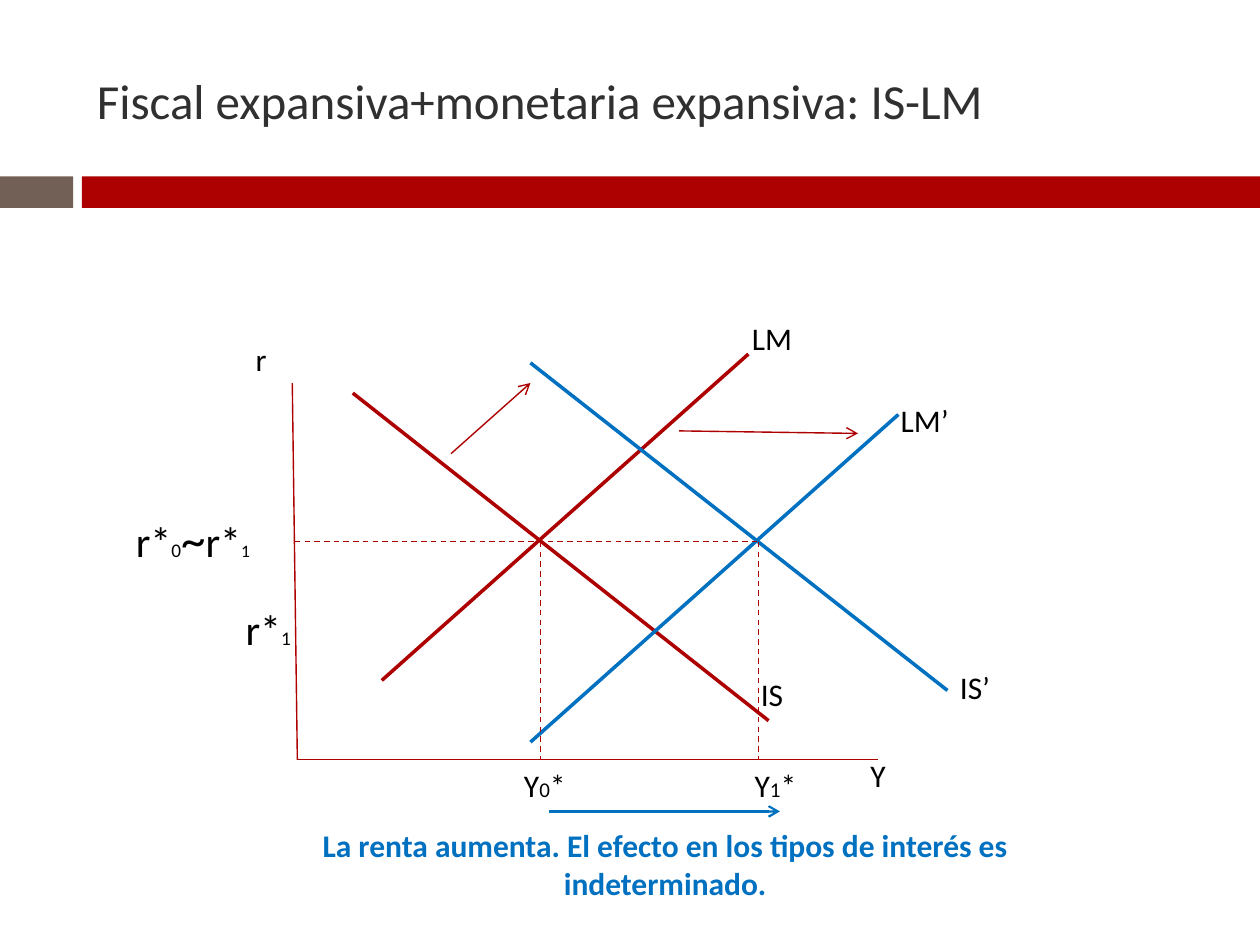
from lxml import etree
from pptx import Presentation
from pptx.dml.color import RGBColor
from pptx.enum.dml import MSO_LINE
from pptx.enum.shapes import MSO_CONNECTOR, MSO_SHAPE
from pptx.enum.text import MSO_ANCHOR, PP_ALIGN
from pptx.oxml.ns import qn
from pptx.util import Inches, Pt

RED = RGBColor(0xAD, 0x01, 0x01)
TAUPE = RGBColor(0x72, 0x60, 0x56)
BLUE = RGBColor(0x00, 0x70, 0xC0)
CHARCOAL = RGBColor(0x30, 0x30, 0x30)
BLACK = RGBColor(0x00, 0x00, 0x00)
RECTANGLE = MSO_SHAPE.RECTANGLE
STRAIGHT = MSO_CONNECTOR.STRAIGHT
DASH = MSO_LINE.DASH
TOP, MIDDLE = MSO_ANCHOR.TOP, MSO_ANCHOR.MIDDLE
LEFT, CENTER = PP_ALIGN.LEFT, PP_ALIGN.CENTER
COLUMNS, ROWS = 100, 75
THIN, MEDIUM, THICK = 0.79, 1.25, 2


class DiagramSlide:
    """Draw on one slide with a shared style and a grid of 100 columns by 75 rows."""

    font = "Calibri"

    def __init__(self, deck):
        self.column = deck.slide_width / COLUMNS
        self.row = deck.slide_height / ROWS
        self.shapes = deck.slides.add_slide(deck.slide_layouts[6]).shapes

    def place(self, *lengths):
        units = (self.column, self.row) * 2
        return [round(length * unit) for length, unit in zip(lengths, units)]

    def band(self, box, color):
        band = self.shapes.add_shape(RECTANGLE, *self.place(*box))
        band.shadow.inherit = False
        band.fill.solid()
        band.fill.fore_color.rgb = color
        band.line.fill.background()

    def line(self, ends, color=RED, width=THIN, dash=None, arrow=False):
        line = self.shapes.add_connector(STRAIGHT, *self.place(*ends))
        line.line.color.rgb = color
        line.line.width = Pt(width)
        if dash:
            line.line.dash_style = dash
        if arrow:
            outline = line.line._get_or_add_ln()
            etree.SubElement(outline, qn("a:tailEnd"), type="arrow")
        etree.SubElement(line._element.spPr, qn("a:effectLst"))

    def text(self, box, *runs, color=BLACK, bold=False, align=LEFT, anchor=TOP):
        frame = self.shapes.add_textbox(*self.place(*box)).text_frame
        frame.word_wrap = True
        frame.vertical_anchor = anchor
        paragraph = frame.paragraphs[0]
        paragraph.alignment = align
        for words, size in runs:
            run = paragraph.add_run()
            run.text = words
            run.font.name = self.font
            run.font.size = Pt(size)
            run.font.bold = bold
            run.font.color.rgb = color


def main():
    deck = Presentation()
    deck.slide_width, deck.slide_height = Inches(10), Inches(7.5)
    slide = DiagramSlide(deck)

    slide.band((0, 14, 5.8, 2.5), TAUPE)
    slide.band((6.5, 14, 93.5, 2.5), RED)
    slide.text((6.7, 2.5, 89.2, 10.8), ("Fiscal expansiva+monetaria expansiva: IS-LM", 28),
               color=CHARCOAL, anchor=MIDDLE)

    origin_x, income_axis = 23.6, 60.3
    slide.line((23.2, 30.4, origin_x, income_axis))
    slide.line((origin_x, income_axis, 69.7, income_axis))

    curves = [
        ((30.3, 54, 59.4, 28.1), RED),
        ((28, 31.2, 61, 57.2), RED),
        ((42.1, 58.9, 71.3, 32.9), BLUE),
        ((42.1, 28.8, 75.2, 54.8), BLUE),
    ]
    for ends, color in curves:
        slide.line(ends, color, THICK)

    rate, incomes = 43, (42.9, 60.2)
    slide.line((23.4, rate, incomes[-1], rate), dash=DASH)
    for period, income in enumerate(incomes):
        slide.line((income, rate, income, income_axis), dash=DASH)
        slide.text((income - 2.3 + period, income_axis, 6.1, 4),
                   ("Y", 18), (str(period), 12), ("*", 18))

    for ends in ((53.9, 34.2, 68.1, 34.4), (35.8, 36, 42.1, 30.4)):
        slide.line(ends, arrow=True)
    slide.line((43.6, 64.4, 61.9, 64.4), BLUE, MEDIUM, arrow=True)

    labels = [
        ("r", 19.3, 26.5, 9.4),
        ("Y", 68.1, 59.5, 9.4),
        ("LM", 58.7, 24.8, 13.4),
        ("IS", 59.4, 53.1, 13.4),
        ("LM’", 70.5, 31.3, 13.4),
        ("IS’", 75.2, 52.5, 6.7),
    ]
    for label, left, top, width in labels:
        slide.text((left, top, width, 4), (label, 18))

    slide.text((9.8, 39.9, 15, 8.8),
               ("r*", 24), ("0", 11), ("~", 28), ("r*", 24), ("1", 10))
    slide.text((18.5, 47.4, 7.1, 5), ("r*", 24), ("1", 11))
    slide.text((20.1, 65.1, 65.4, 7.1),
               ("La renta aumenta. El efecto en los tipos de interés es indeterminado.", 18),
               color=BLUE, bold=True, align=CENTER)

    deck.save("out.pptx")


if __name__ == "__main__":
    main()
